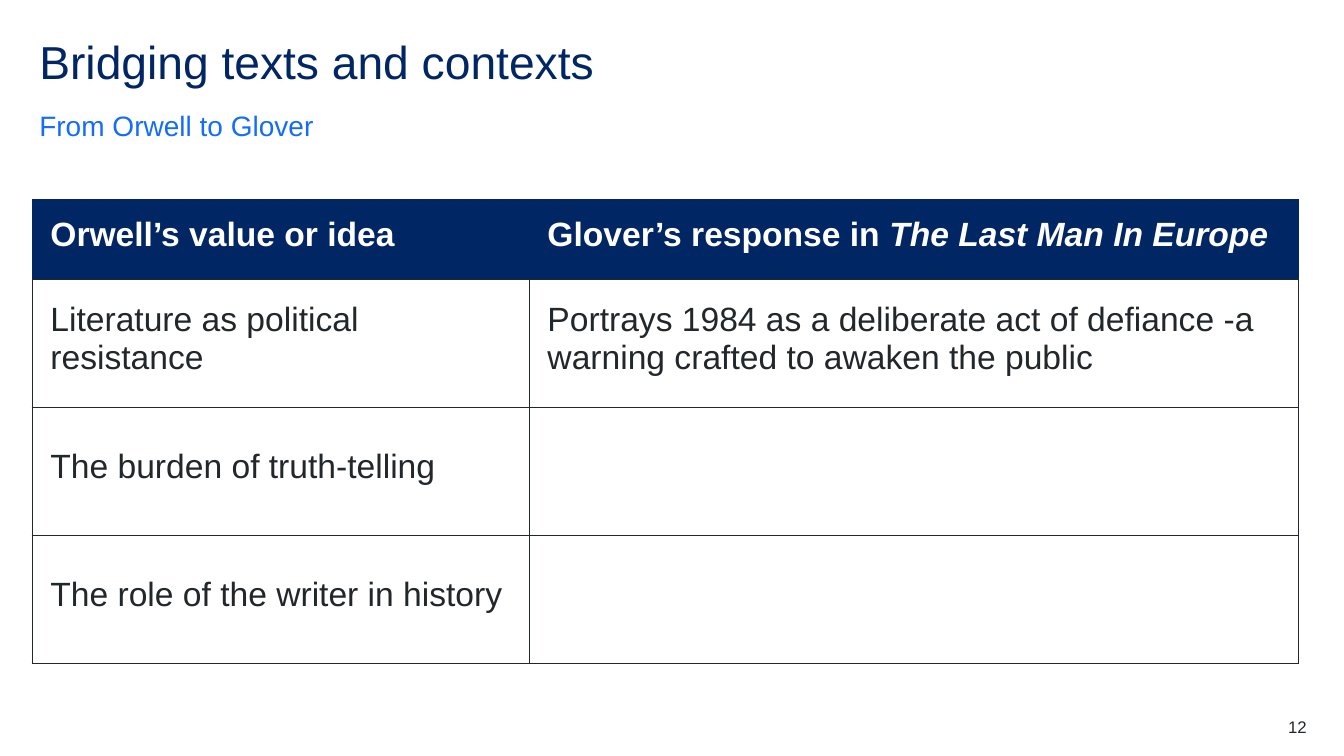
from lxml import etree
from pptx import Presentation, util as u
from pptx.dml.color import RGBColor
from pptx.enum import text
from pptx.oxml.ns import qn

NAVY, BLUE, INK, WHITE = "002664", "146CFD", "22272B", "FFFFFF"
COLS = [4.93, 7.63]
ROWS = [0.79] + [1.27] * 3
HEADER = [
    [("Orwell’s value or idea", False)],
    [("Glover’s response in ", False), ("The Last Man In Europe", True)],
]
BODY = [
    ["Literature as political resistance",
     "Portrays 1984 as a deliberate act of defiance -a warning crafted to awaken the public"],
    ["The burden of truth-telling", ""],
    ["The role of the writer in history", ""],
]


def color(value):
    return RGBColor.from_string(value)


def add_run(p, words, size, fill, bold=False, italic=False):
    r = p.add_run()
    r.text = words
    f = r.font
    f.name, f.size, f.bold, f.italic = "Arial", u.Pt(size), bold, italic
    f.color.rgb = color(fill)


def write(sp, words, size, fill, anchor=text.MSO_ANCHOR.TOP,
          align=text.PP_ALIGN.LEFT, spacing=0.9, after=0):
    tf = sp.text_frame
    tf.word_wrap = True
    tf.auto_size = text.MSO_AUTO_SIZE.NONE
    tf.vertical_anchor = anchor
    tf.margin_left = tf.margin_top = tf.margin_right = tf.margin_bottom = 0
    p = tf.paragraphs[0]
    p.alignment, p.line_spacing, p.space_after = align, spacing, u.Pt(after)
    add_run(p, words, size, fill)


def set_borders(cell, **sides):
    tc_pr = cell._tc.get_or_add_tcPr()
    for i, side in enumerate("LRTB"):
        fill, width = sides.get(side, (INK, 1))
        ln = etree.Element(qn(f"a:ln{side}"), w=str(u.Pt(width)))
        if fill:
            solid = etree.SubElement(ln, qn("a:solidFill"))
            etree.SubElement(solid, qn("a:srgbClr"), val=fill)
        else:
            etree.SubElement(ln, qn("a:noFill"))
        tc_pr.insert(i, ln)


def format_cell(cell, runs, fill, ink, bold, **sides):
    cell.fill.solid()
    cell.fill.fore_color.rgb = color(fill)
    cell.vertical_anchor = text.MSO_ANCHOR.MIDDLE
    cell.margin_left = cell.margin_right = cell.margin_bottom = u.Inches(0.18)
    cell.margin_top = u.Inches(0.09)
    for words, italic in runs:
        add_run(cell.text_frame.paragraphs[0], words, 24, ink, bold, italic)
    set_borders(cell, **sides)


def add_heading(s, left, top, width):
    title = s.shapes.title
    title.left, title.top, title.width, title.height = map(u.Inches, (left, top, width, 0.6))
    write(title, "Bridging texts and contexts", 33, NAVY)
    sp = s.shapes.add_textbox(*map(u.Inches, (left, top + 0.68, width, 0.34)))
    write(sp, "From Orwell to Glover", 20, BLUE, text.MSO_ANCHOR.BOTTOM, spacing=1.5, after=12)


def add_comparison(s, left, top):
    box = map(u.Inches, (left, top, sum(COLS), sum(ROWS)))
    table = s.shapes.add_table(len(ROWS), len(COLS), *box).table
    table.horz_banding = False
    for column, width in zip(table.columns, COLS):
        column.width = u.Inches(width)
    for row, height in zip(table.rows, ROWS):
        row.height = u.Inches(height)
    edge, none = (NAVY, 0.5), (None, 0)
    for c, runs in enumerate(HEADER):
        format_cell(table.cell(0, c), runs, NAVY, WHITE, True, T=edge,
                    L=none if c else edge, R=edge if c else none)
    for r, row in enumerate(BODY, 1):
        for c, words in enumerate(row):
            runs = [(words, False)] if words else []
            format_cell(table.cell(r, c), runs, WHITE, INK, False)


def add_page_number(s, left, top):
    sp = s.shapes.add_textbox(*map(u.Inches, (left, top, 0.79, 0.2)))
    write(sp, "12", 12, INK, align=text.PP_ALIGN.RIGHT, after=6)


def main():
    prs = Presentation()
    prs.slide_width, prs.slide_height = u.Inches(13.33), u.Inches(7.5)
    s = prs.slides.add_slide(prs.slide_layouts[5])
    add_heading(s, 0.39, 0.39, 12.56)
    add_comparison(s, 0.32, 1.98)
    add_page_number(s, 12.17, 7.13)
    prs.save("out.pptx")


if __name__ == "__main__":
    main()
